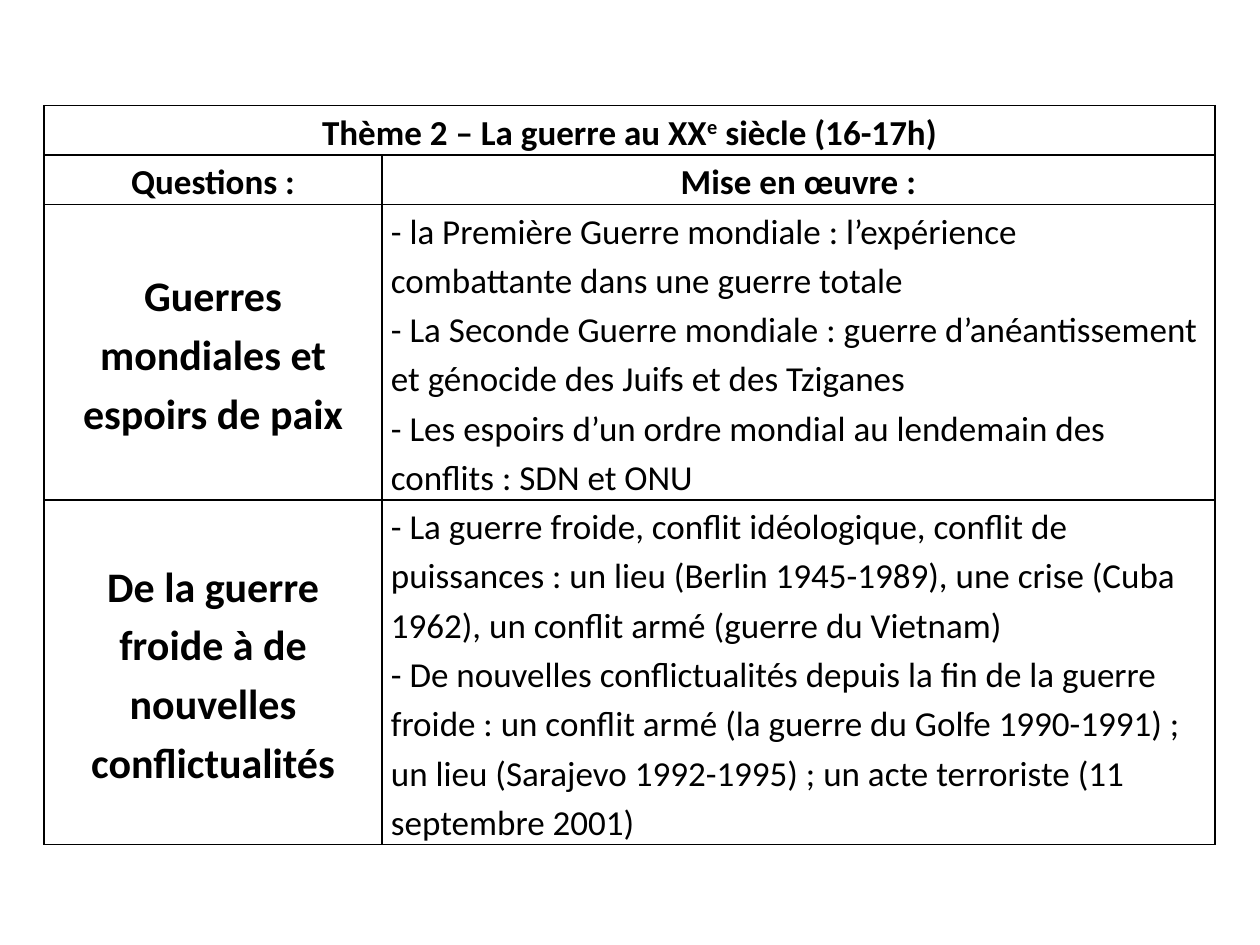
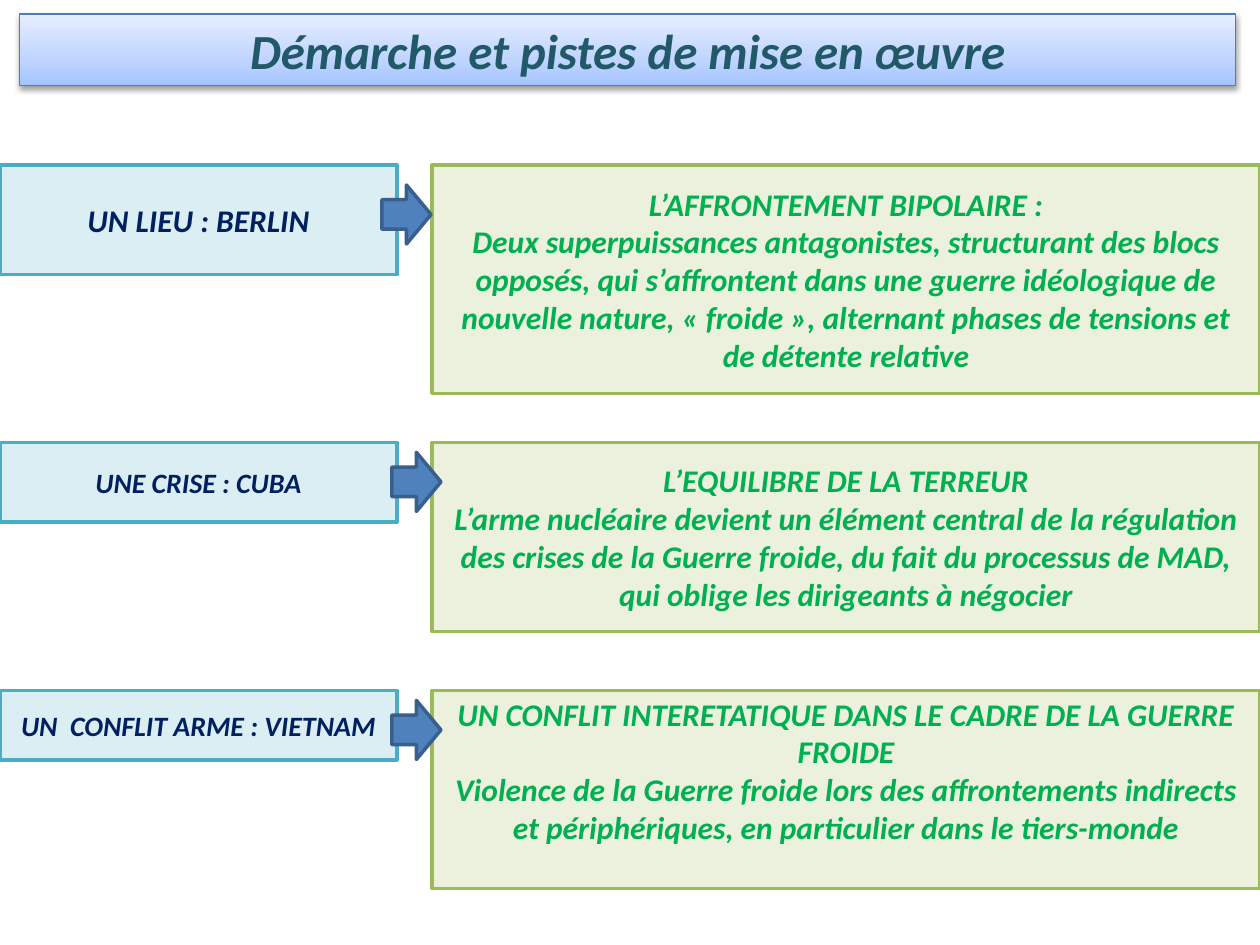
from copy import deepcopy

from lxml.etree import SubElement
from pptx import Presentation
from pptx.dml.color import RGBColor
from pptx.enum.shapes import MSO_SHAPE
from pptx.enum.text import MSO_ANCHOR, MSO_AUTO_SIZE, PP_ALIGN
from pptx.oxml.ns import qn
from pptx.util import Cm, Pt

FONT = "Calibri"
BLACK, TEAL, NAVY, GREEN = "000000", "215968", "002060", "00B050"
LABEL_COLOR, BOX_COLOR = "4BACC6", "9BBB59"
ARROW_FILL, ARROW_LINE = "4F81BD", "3A5F8C"
BANNER_LINE = "4B7EBC"
BANNER_STOPS = [(0, "A4C4FF"), (0.35, "BFD4FF"), (1, "E6EEFF")]

THEME_PARTS = ["Thème 2 – La guerre au XX", "e", " siècle (16-17h)"]
HEADINGS = ["Questions :", "Mise en œuvre :"]
QUESTIONS = [
    ("Guerres mondiales et espoirs de paix", [
        "- la Première Guerre mondiale : l’expérience combattante dans une guerre totale",
        "- La Seconde Guerre mondiale : guerre d’anéantissement et génocide des Juifs "
        "et des Tziganes",
        "- Les espoirs d’un ordre mondial au lendemain des conflits : SDN et ONU",
    ]),
    ("De la guerre froide à de nouvelles conflictualités", [
        "- La guerre froide, conflit idéologique, conflit de puissances : un lieu "
        "(Berlin 1945-1989), une crise (Cuba 1962), un conflit armé (guerre du Vietnam)",
        "- De nouvelles conflictualités depuis la fin de la guerre froide : un conflit "
        "armé (la guerre du Golfe 1990-1991) ; un lieu (Sarajevo 1992-1995) ; "
        "un acte terroriste (11 septembre 2001)",
    ]),
]
COLUMN_WIDTHS = [6.81, 16.79]
ROW_HEIGHTS = [0.99, 0.99, 5.95, 6.95]

APPROACH_TITLE = "Démarche et pistes de mise en œuvre"
STEPS = [
    {"label": "UN LIEU : BERLIN", "size": 18, "top": 3.33, "label_height": 2.21,
     "box_height": 4.6, "arrow": (7.7, 0.4), "bottom_margin": 0.13,
     "text": ["L’AFFRONTEMENT BIPOLAIRE :",
              "Deux superpuissances antagonistes, structurant des blocs opposés, qui "
              "s’affrontent dans une guerre idéologique de nouvelle nature, « froide », "
              "alternant phases de tensions et de détente relative"]},
    {"label": "UNE CRISE : CUBA", "size": 16, "top": 8.92, "label_height": 1.6,
     "box_height": 3.81, "arrow": (7.9, 0.2), "bottom_margin": 0.13,
     "text": ["L’EQUILIBRE DE LA TERREUR",
              "L’arme nucléaire devient un élément central de la régulation des crises "
              "de la Guerre froide, du fait du processus de MAD, qui oblige les "
              "dirigeants à négocier"]},
    {"label": "UN  CONFLIT ARME : VIETNAM", "size": 16, "top": 13.92, "label_height": 1.4,
     "box_height": 3.99, "arrow": (7.9, 0.2), "bottom_margin": 0.9,
     "text": ["UN CONFLIT INTERETATIQUE DANS LE CADRE DE LA GUERRE FROIDE",
              "Violence de la Guerre froide lors des affrontements indirects et "
              "périphériques, en particulier dans le tiers-monde"]},
]
SLIDE_WIDTH, SLIDE_HEIGHT = 25.4, 19.05
LABEL_WIDTH, BOX_LEFT = 8, 8.71


def rgb(color):
    return RGBColor.from_string(color)


def write(text_frame, lines, size, color, bold=True, italic=False,
          alignment=PP_ALIGN.CENTER, spacing=1.0):
    """Write one paragraph per line; a line given as a list becomes several runs."""
    for index, line in enumerate(lines):
        paragraph = text_frame.paragraphs[0] if index == 0 else text_frame.add_paragraph()
        paragraph.alignment = alignment
        paragraph.line_spacing = spacing
        for part in [line] if isinstance(line, str) else line:
            run = paragraph.add_run()
            run.text = part
            font = run.font
            font.name, font.size = FONT, Pt(size)
            font.bold, font.italic = bold, italic
            font.color.rgb = rgb(color)


def frame_cell(cell):
    """Give a cell thin black borders, no fill and tight margins."""
    properties = cell._tc.get_or_add_tcPr()
    for side in ("lnL", "lnR", "lnT", "lnB"):
        line = SubElement(properties, qn(f"a:{side}"), w=str(Pt(1)))
        fill = SubElement(line, qn("a:solidFill"))
        SubElement(fill, qn("a:srgbClr"), val=BLACK)
    cell.fill.background()
    cell.vertical_anchor = MSO_ANCHOR.MIDDLE
    cell.margin_left = cell.margin_right = Cm(0.18)
    cell.margin_top = cell.margin_bottom = 0


def add_programme_slide(presentation):
    slide = presentation.slides.add_slide(presentation.slide_layouts[6])
    frame = slide.shapes.add_table(
        len(ROW_HEIGHTS), len(COLUMN_WIDTHS), Cm(0.89), Cm(2.13),
        Cm(sum(COLUMN_WIDTHS)), Cm(sum(ROW_HEIGHTS)))
    table = frame.table
    table.first_row = table.horz_banding = False
    for column, width in zip(table.columns, COLUMN_WIDTHS):
        column.width = Cm(width)
    for row, height in zip(table.rows, ROW_HEIGHTS):
        row.height = Cm(height)
    for cell in table.iter_cells():
        frame_cell(cell)

    theme_cell = table.cell(0, 0)
    theme_cell.merge(table.cell(0, 1))
    write(theme_cell.text_frame, [THEME_PARTS], 20, BLACK, spacing=1.15)
    exponent = theme_cell.text_frame.paragraphs[0].runs[1]
    exponent._r.get_or_add_rPr().set("baseline", "30000")
    for column, heading in enumerate(HEADINGS):
        write(table.cell(1, column).text_frame, [heading], 20, BLACK, spacing=1.15)
    for row, (question, points) in enumerate(QUESTIONS, start=2):
        write(table.cell(row, 0).text_frame, [question], 24, BLACK, spacing=1.15)
        write(table.cell(row, 1).text_frame, points, 20, BLACK, bold=False,
              alignment=PP_ALIGN.LEFT, spacing=1.15)


def format_banner(title):
    title.left, title.top, title.width, title.height = Cm(0.4), Cm(0.28), Cm(24.5), Cm(1.45)
    title.fill.gradient()
    title.fill.gradient_angle = 90
    stop_list = title._element.spPr.find(".//" + qn("a:gsLst"))
    stop_list.insert(1, deepcopy(stop_list[0]))
    for stop, (position, color) in zip(title.fill.gradient_stops, BANNER_STOPS):
        stop.position = position
        stop.color.rgb = rgb(color)
    title.line.color.rgb = rgb(BANNER_LINE)
    title.line.width = Pt(0.75)
    effects = SubElement(title._element.spPr, qn("a:effectLst"))
    shadow = SubElement(effects, qn("a:outerShdw"), blurRad=str(Pt(3.1)),
                        dist=str(Pt(1.6)), dir="5400000", rotWithShape="0")
    shadow_color = SubElement(shadow, qn("a:srgbClr"), val=BLACK)
    SubElement(shadow_color, qn("a:alpha"), val="38000")
    title.text_frame.auto_size = MSO_AUTO_SIZE.NONE
    title.text_frame.vertical_anchor = MSO_ANCHOR.MIDDLE
    write(title.text_frame, [APPROACH_TITLE], 28, TEAL, italic=True)


def add_block(slide, kind, left, top, width, height, fill, line, opacity=100):
    shape = slide.shapes.add_shape(kind, Cm(left), Cm(top), Cm(width), Cm(height))
    shape.shadow.inherit = False
    shape.fill.solid()
    shape.fill.fore_color.rgb = rgb(fill)
    if opacity < 100:
        color = shape._element.spPr.find(qn("a:solidFill"))[0]
        SubElement(color, qn("a:alpha"), val=str(opacity * 1000))
    shape.line.color.rgb = rgb(line)
    shape.line.width = Pt(2)
    shape.text_frame.word_wrap = True
    shape.text_frame.vertical_anchor = MSO_ANCHOR.MIDDLE
    return shape


def add_step(slide, step):
    top = step["top"]
    label = add_block(slide, MSO_SHAPE.RECTANGLE, 0, top, LABEL_WIDTH,
                      step["label_height"], LABEL_COLOR, LABEL_COLOR, opacity=20)
    write(label.text_frame, [step["label"]], step["size"], NAVY, italic=True)
    box = add_block(slide, MSO_SHAPE.RECTANGLE, BOX_LEFT, top, SLIDE_WIDTH - BOX_LEFT,
                    step["box_height"], BOX_COLOR, BOX_COLOR, opacity=20)
    box.text_frame.margin_bottom = Cm(step["bottom_margin"])
    write(box.text_frame, step["text"], 18, GREEN, italic=True)
    arrow_left, arrow_offset = step["arrow"]
    add_block(slide, MSO_SHAPE.RIGHT_ARROW, arrow_left, top + arrow_offset, 0.99, 1.19,
              ARROW_FILL, ARROW_LINE)


def add_approach_slide(presentation):
    slide = presentation.slides.add_slide(presentation.slide_layouts[5])
    format_banner(slide.shapes.title)
    for step in STEPS:
        add_step(slide, step)


def main():
    presentation = Presentation()
    presentation.slide_width, presentation.slide_height = Cm(SLIDE_WIDTH), Cm(SLIDE_HEIGHT)
    add_programme_slide(presentation)
    add_approach_slide(presentation)
    presentation.save("out.pptx")


if __name__ == "__main__":
    main()
